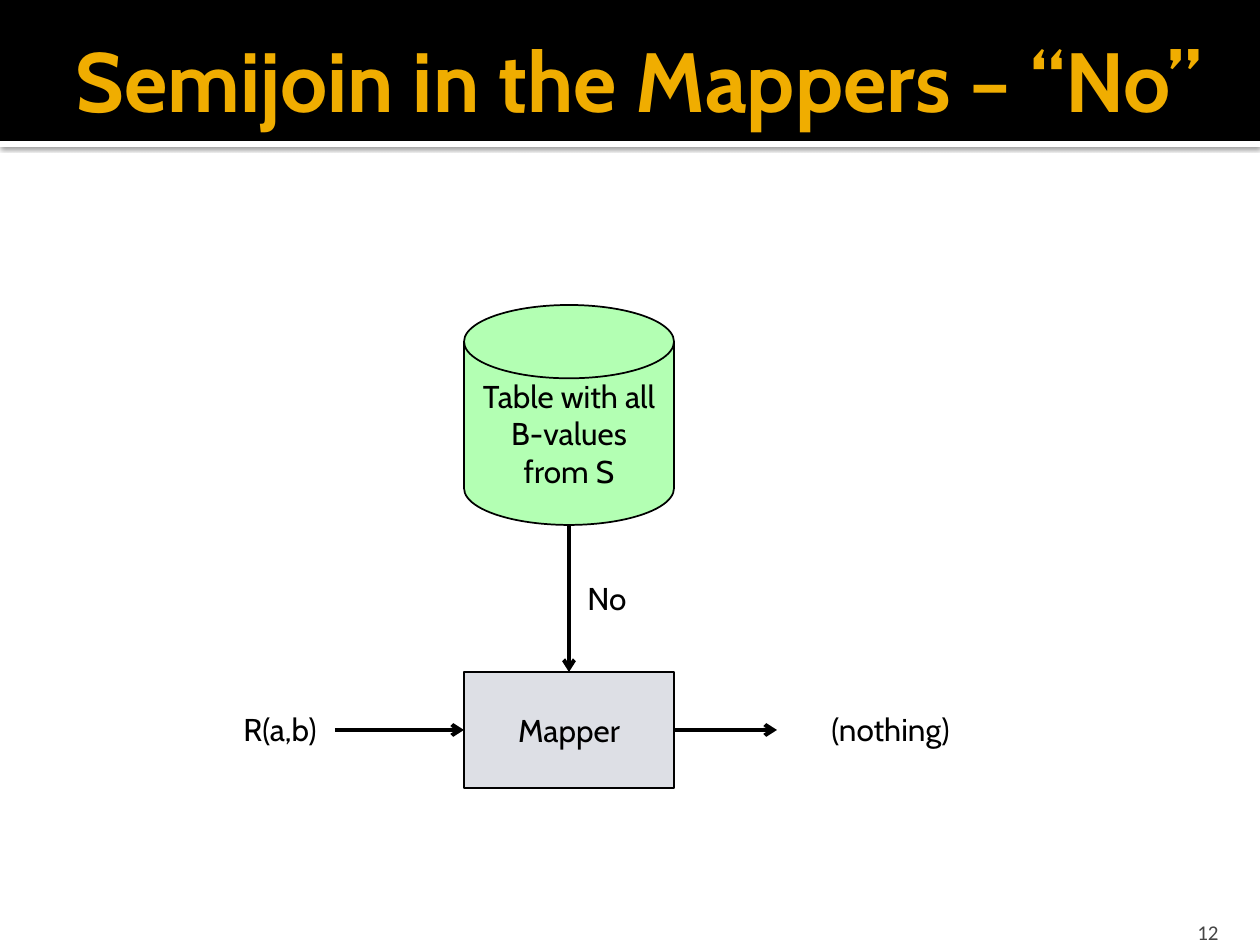
from lxml import etree
from pptx import Presentation
from pptx.dml.color import RGBColor
from pptx.enum.shapes import MSO_CONNECTOR, MSO_SHAPE
from pptx.enum.text import MSO_ANCHOR, PP_ALIGN
from pptx.oxml import parse_xml
from pptx.oxml.ns import nsdecls, qn
from pptx.util import Emu, Pt

RECTANGLE, DISK = MSO_SHAPE.RECTANGLE, MSO_SHAPE.FLOWCHART_MAGNETIC_DISK
STRAIGHT = MSO_CONNECTOR.STRAIGHT
TOP, MIDDLE, BOTTOM = MSO_ANCHOR.TOP, MSO_ANCHOR.MIDDLE, MSO_ANCHOR.BOTTOM
LEFT, CENTER, RIGHT = PP_ALIGN.LEFT, PP_ALIGN.CENTER, PP_ALIGN.RIGHT

THEME = {
    "black": RGBColor(0x00, 0x00, 0x00),
    "white": RGBColor(0xFF, 0xFF, 0xFF),
    "gold": RGBColor(0xF0, 0xAD, 0x00),
    "gray": RGBColor(0x45, 0x45, 0x45),
    "mapper": RGBColor(0xDD, 0xDF, 0xE5),
    "disk": RGBColor(0xB3, 0xFF, 0xB3),
    "font": "Cabin",
    "number_font": "Calibri",
    "title_size": Pt(48),
    "body_size": Pt(18),
    "number_size": Pt(12),
}
PIXEL = 914400 / 126


def px(*lengths):
    return [Emu(round(length * PIXEL)) for length in lengths]


def write(shape, text, align=LEFT, anchor=TOP, wrap=True, size="body_size",
          color="black", font="font", bold=False):
    frame = shape.text_frame
    frame.word_wrap = wrap
    frame.vertical_anchor = anchor
    paragraph = frame.paragraphs[0]
    paragraph.alignment = align
    run = paragraph.add_run()
    run.text = text
    run.font.name = THEME[font]
    run.font.size = THEME[size]
    run.font.color.rgb = THEME[color]
    run.font.bold = bold
    return frame


presentation = Presentation()
presentation.slide_width, presentation.slide_height = px(1260, 945)
slide = presentation.slides.add_slide(presentation.slide_layouts[6])
shapes = slide.shapes

# Header band above a white rule with a soft shadow
for top, height, color in [(141, 6, "white"), (0, 141, "black")]:
    band = shapes.add_shape(RECTANGLE, *px(0, top, 1260, height))
    band.shadow.inherit = False
    band.fill.solid()
    band.fill.fore_color.rgb = THEME[color]
    band.line.fill.background()
    if color == "white":
        effects = band._element.spPr.find(qn("a:effectLst"))
        effects.append(parse_xml(
            f'<a:outerShdw {nsdecls("a")} blurRad="{Pt(2.5)}" dist="{Pt(0.8)}" '
            'dir="5400000" algn="tl" rotWithShape="0"><a:srgbClr val="000000">'
            '<a:alpha val="60000"/></a:srgbClr></a:outerShdw>'))

title = shapes.add_textbox(*px(63, 21, 1197, 116))
title_frame = write(title, "Semijoin in the Mappers – “No”", anchor=MIDDLE,
                    size="title_size", color="gold", bold=True)
title_frame.margin_right = Pt(3.6)

number = shapes.add_textbox(*px(1130, 907, 101, 38))
number_frame = write(number, "12", RIGHT, BOTTOM, size="number_size",
                     color="gray", font="number_font")
number_frame.margin_bottom = 0

# Mapper and the lookup table above it share one column
nodes = {}
for name, kind, top, height, text in [
    ("mapper", RECTANGLE, 672, 116, "Mapper"),
    ("disk", DISK, 305, 220, "Table with all B-values from S"),
]:
    node = shapes.add_shape(kind, *px(464, top, 210, height))
    node.shadow.inherit = False
    node.fill.solid()
    node.fill.fore_color.rgb = THEME[name]
    node.line.color.rgb = THEME["black"]
    node.line.width = Pt(1)
    write(node, text, CENTER, MIDDLE)
    nodes[name] = node
mapper = nodes["mapper"]

# Arrows: start, end, mapper side joined at the start, at the end
for start, end, begin_side, end_side in [
    ((335, 730), (464, 730), None, 1),
    ((569, 525), (569, 672), None, 0),
    ((674, 730), (777, 730), 3, None),
]:
    arrow = shapes.add_connector(STRAIGHT, *px(*start, *end))
    if begin_side is not None:
        arrow.begin_connect(mapper, begin_side)
    if end_side is not None:
        arrow.end_connect(mapper, end_side)
    arrow.line.color.rgb = THEME["black"]
    arrow.line.width = Pt(2.25)
    etree.SubElement(arrow.line._get_or_add_ln(), qn("a:tailEnd"), type="arrow")
    etree.SubElement(arrow._element.spPr, qn("a:effectLst"))

for left, top, width, text in [
    (231, 704, 103, "R(a,b)"),
    (575, 573, 64, "No"),
    (819, 704, 147, "(nothing)"),
]:
    write(shapes.add_textbox(*px(left, top, width, 50)), text, wrap=False)

presentation.save("out.pptx")
